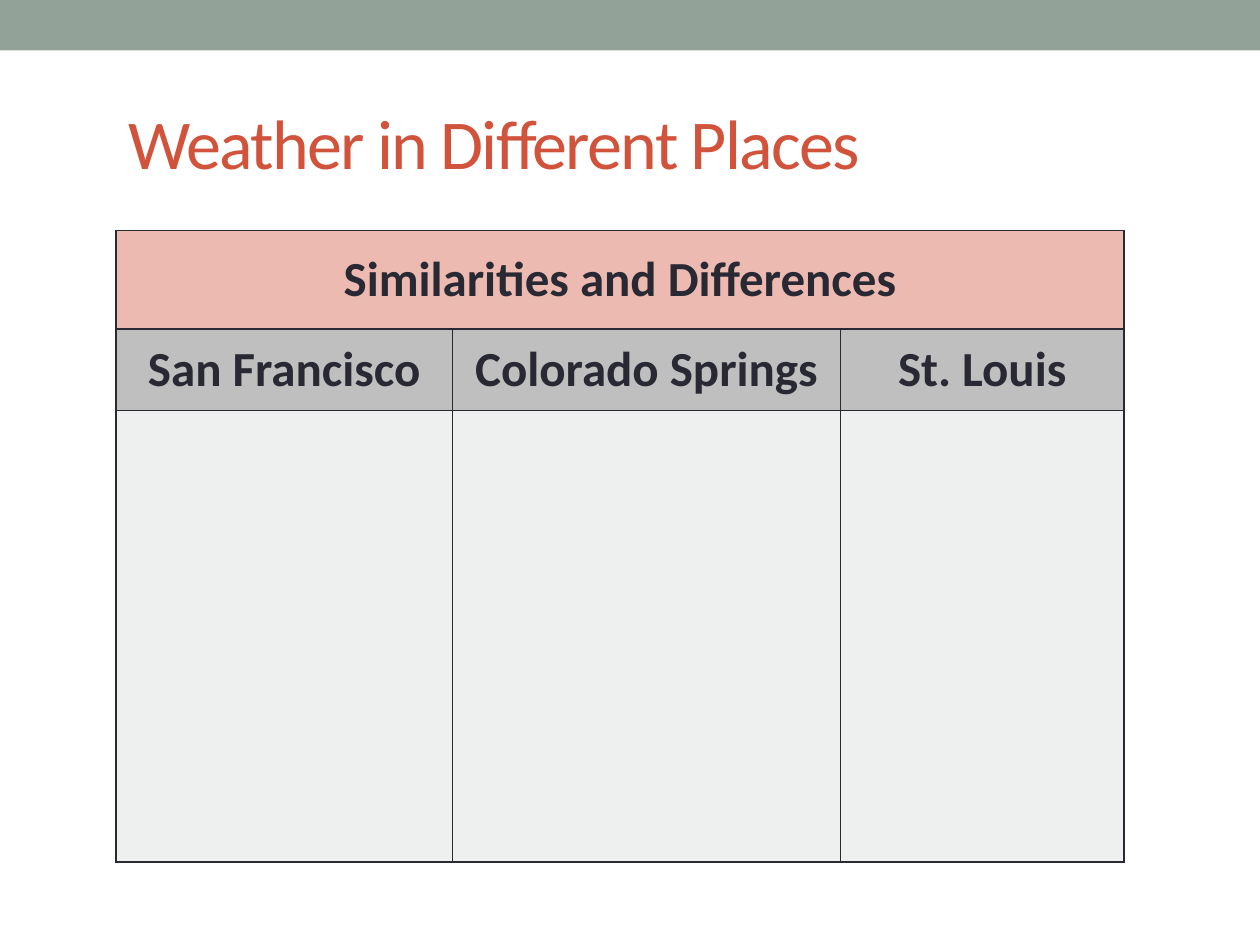
from lxml.etree import SubElement
from pptx import Presentation
from pptx.dml.color import RGBColor as Rgb
from pptx.enum.shapes import MSO_SHAPE as Kind
from pptx.enum.text import MSO_ANCHOR as Anchor, PP_ALIGN as Align
from pptx.oxml.ns import qn
from pptx.util import Inches, Pt

WIDE, HIGH = 10, 7.5
INK = {"band": "93A299", "title": "D2533C", "text": "292934",
       "head": "EDBAB1", "city": "BFBFBF", "body": "EEF0EF"}
CITIES = ["San Francisco", "Colorado Springs", "St. Louis"]


class Deck:
    """Hold the style and the current slide, placing elements by shares of its size."""

    def __init__(self, face="Calibri"):
        self.face = face
        self.show = Presentation()
        self.show.slide_width, self.show.slide_height = Inches(WIDE), Inches(HIGH)
        self.slide = self.show.slides.add_slide(self.show.slide_layouts[5])

    def box(self, x, y, w, h):
        return [Inches(round(v, 2)) for v in (x * WIDE, y * HIGH, w * WIDE, h * HIGH)]

    def font(self, para, size, ink, bold=False):
        for run in para.runs:
            run.font.name, run.font.size, run.font.bold = self.face, Pt(size), bold
            run.font.color.rgb = Rgb.from_string(INK[ink])

    def band(self, area, ink):
        bar = self.slide.shapes.add_shape(Kind.RECTANGLE, *self.box(*area))
        bar.shadow.inherit = False
        bar.fill.solid()
        bar.fill.fore_color.rgb = Rgb.from_string(INK[ink])
        bar.line.fill.background()

    def title(self, area, text):
        head = self.slide.shapes.title
        head.left, head.top, head.width, head.height = self.box(*area)
        frame = head.text_frame
        frame.text, frame.word_wrap = text, True
        frame.vertical_anchor = Anchor.MIDDLE
        para = frame.paragraphs[0]
        para.alignment = Align.LEFT
        self.font(para, 40, "title")
        for run in para.runs:
            run.font._element.set("spc", "-100")

    def edge(self, cell):
        props = cell._tc.get_or_add_tcPr()
        for at, side in enumerate(("lnL", "lnR", "lnT", "lnB")):
            line = SubElement(props, qn(f"a:{side}"), w=str(Pt(1)))
            fill = SubElement(line, qn("a:solidFill"))
            SubElement(fill, qn("a:srgbClr"), val=INK["text"])
            props.insert(at, line)

    def cell(self, cell, text, ink):
        cell.fill.solid()
        cell.fill.fore_color.rgb = Rgb.from_string(INK[ink])
        cell.vertical_anchor = Anchor.MIDDLE
        cell.text = text
        para = cell.text_frame.paragraphs[0]
        para.alignment = Align.CENTER
        self.font(para, 28, "text", True)
        self.edge(cell)

    def table(self, area, cols, rows, data, inks):
        x, y, w, h = area
        frame = self.slide.shapes.add_table(len(rows), len(cols), *self.box(x, y, w, h))
        grid = frame.table
        for col, part in zip(grid.columns, cols):
            col.width = Inches(round(part * w * WIDE, 2))
        for row, part in zip(grid.rows, rows):
            row.height = Inches(round(part * h * HIGH, 2))
        for r, (line, ink) in enumerate(zip(data, inks)):
            for c, text in enumerate(line):
                self.cell(grid.cell(r, c), text, ink)
        grid.cell(0, 0).merge(grid.cell(0, len(cols) - 1))


def main():
    deck = Deck()
    deck.band((0, 0, 1, 0.4 / HIGH), "band")
    deck.title((0.092, 0.58 / HIGH, 0.858, 0.144), "Weather in Different Places")
    deck.table((0.092, 1.83 / HIGH, 0.8, 5.01 / HIGH),
               (2.67 / 8, 3.08 / 8, 2.25 / 8),
               (0.78 / 5.01, 0.65 / 5.01, 3.58 / 5.01),
               [["Similarities and Differences", "", ""], CITIES, [""] * 3],
               ("head", "city", "body"))
    deck.show.save("out.pptx")


if __name__ == "__main__":
    main()
